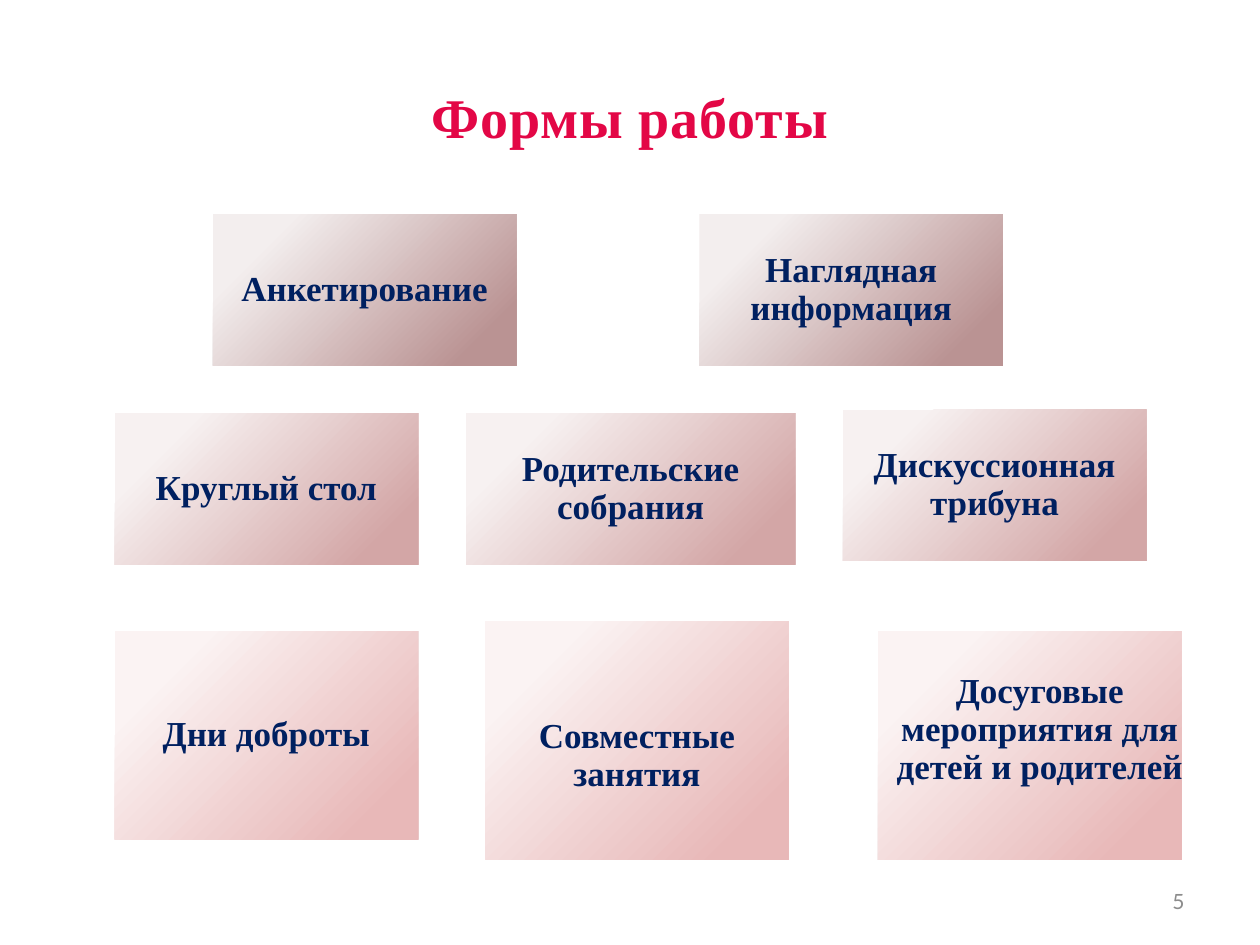
import pptx
import pptx.dml.color
import pptx.enum.shapes
import pptx.enum.text
import pptx.util

Cm, Pt = pptx.util.Cm, pptx.util.Pt
RGBColor = pptx.dml.color.RGBColor
ALIGN = pptx.enum.text.PP_ALIGN

CRIMSON = RGBColor(0xE3, 0x07, 0x46)
NAVY = RGBColor(0x00, 0x20, 0x60)
GREY = RGBColor(0x8C, 0x8C, 0x8C)

TITLE_FORMAT = {"name": "Times New Roman", "size": Pt(32), "bold": True}
CARD_FORMAT = {"name": "Times New Roman", "size": Pt(20), "bold": True}
NUMBER_FORMAT = {"name": "Lato", "size": Pt(12)}

CARD_WIDTH, CARD_HEIGHT = 6.12, 3.05
CARD_INSET = 0.03
GRADIENT_STOPS = (0.18, 0.87)

# Each row: gradient colours, then cards as (text, left, top, changes).
# "text" holds the left, top, width and height changes of the label area.
ROWS = [
    ((RGBColor(0xF3, 0xEE, 0xEE), RGBColor(0xBA, 0x93, 0x93)), [
        ("Анкетирование", 4.29, 4.32, {}),
        ("Наглядная информация", 14.1, 4.32, {}),
    ]),
    ((RGBColor(0xF7, 0xF1, 0xF1), RGBColor(0xD3, 0xA6, 0xA6)), [
        ("Круглый стол", 2.31, 8.33, {}),
        ("Родительские собрания", 9.4, 8.33, {"width": 6.63}),
        ("Дискуссионная трибуна", 16.99, 8.26, {}),
    ]),
    ((RGBColor(0xFB, 0xF3, 0xF3), RGBColor(0xE8, 0xB8, 0xB8)), [
        ("Дни доброты", 2.31, 12.73, {"height": 4.19}),
        ("Совместные занятия", 9.78, 12.52,
         {"height": 4.8, "text": (0, 0.64, 0, -0.64)}),
        ("Досуговые мероприятия для детей и родителей", 17.7, 12.73,
         {"height": 4.6, "text": (0.2, 0, 0, -0.61)}),
    ]),
]


def add_text(shapes, text, area, font_format, color, align, inset=None):
    """Add a vertically centred text box and return its paragraph."""
    box = shapes.add_textbox(*(Cm(value) for value in area))
    frame = box.text_frame
    frame.word_wrap = True
    frame.vertical_anchor = pptx.enum.text.MSO_ANCHOR.MIDDLE
    if inset is not None:
        for side in ("left", "top", "right", "bottom"):
            setattr(frame, f"margin_{side}", Cm(inset))
    para = frame.paragraphs[0]
    para.alignment = align
    span = para.add_run()
    span.text = text
    for name, value in font_format.items():
        setattr(span.font, name, value)
    span.font.color.rgb = color
    return para


def add_card(page, text, colors, left, top, changes):
    area = (left, top, changes.get("width", CARD_WIDTH),
            changes.get("height", CARD_HEIGHT))
    group = page.shapes.add_group_shape()
    card = group.shapes.add_shape(pptx.enum.shapes.MSO_SHAPE.RECTANGLE,
                                  *(Cm(value) for value in area))
    card.shadow.inherit = False
    card.line.fill.background()
    card.fill.gradient()
    card.fill.gradient_angle = 315
    for stop, position, color in zip(card.fill.gradient_stops,
                                     GRADIENT_STOPS, colors):
        stop.position = position
        stop.color.rgb = color

    shifts = changes.get("text", (0, 0, 0, 0))
    label_area = [value + shift for value, shift in zip(area, shifts)]
    para = add_text(group.shapes, text, label_area, CARD_FORMAT, NAVY,
                    ALIGN.CENTER, CARD_INSET)
    para.line_spacing = 0.9


def main():
    deck = pptx.Presentation()
    deck.slide_width, deck.slide_height = Cm(25.4), Cm(19.05)
    page = deck.slides.add_slide(deck.slide_layouts[6])

    title = add_text(page.shapes, "Формы работы", (1.27, 0.76, 22.86, 3.18),
                     TITLE_FORMAT, CRIMSON, ALIGN.CENTER)
    title.runs[0]._r.get_or_add_rPr().set("spc", "50")

    for colors, cards in ROWS:
        for text, left, top, changes in cards:
            add_card(page, text, colors, left, top, changes)

    add_text(page.shapes, "5", (18.21, 17.65, 5.92, 1.02), NUMBER_FORMAT,
             GREY, ALIGN.RIGHT)
    deck.save("out.pptx")


if __name__ == "__main__":
    main()
